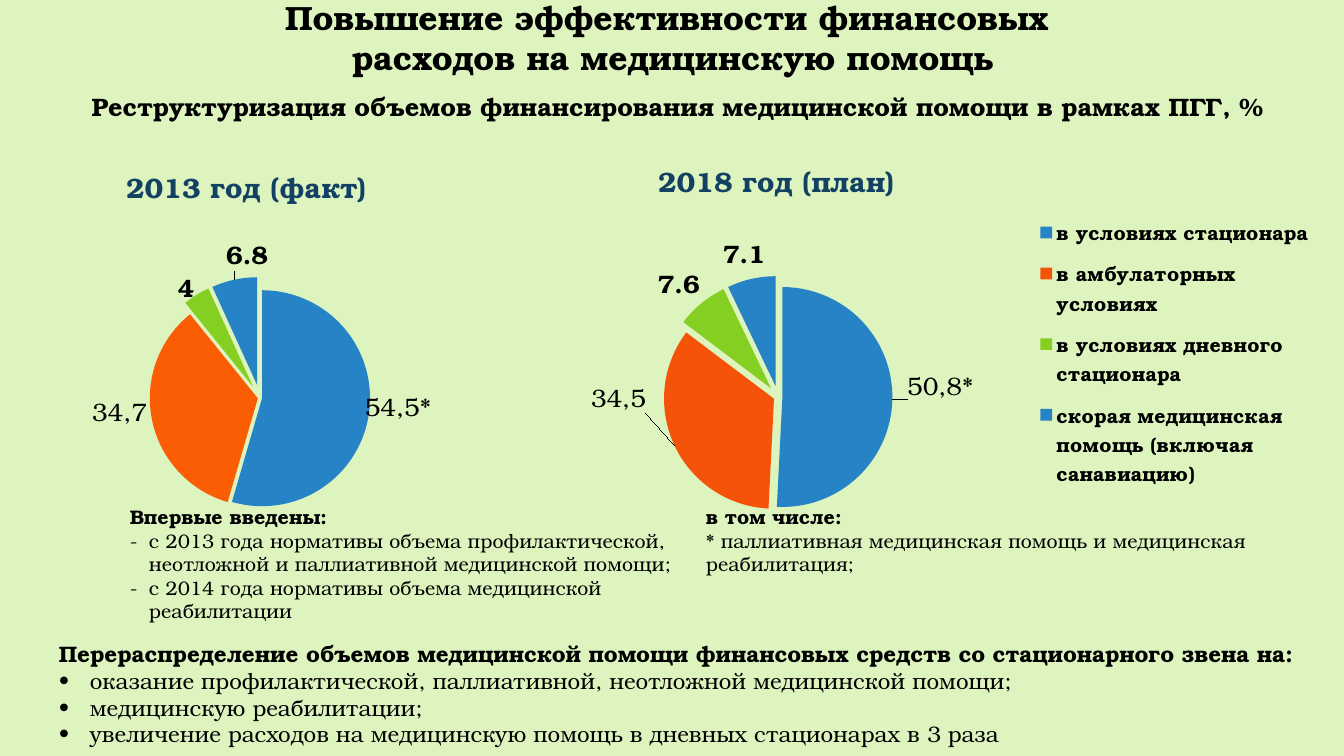
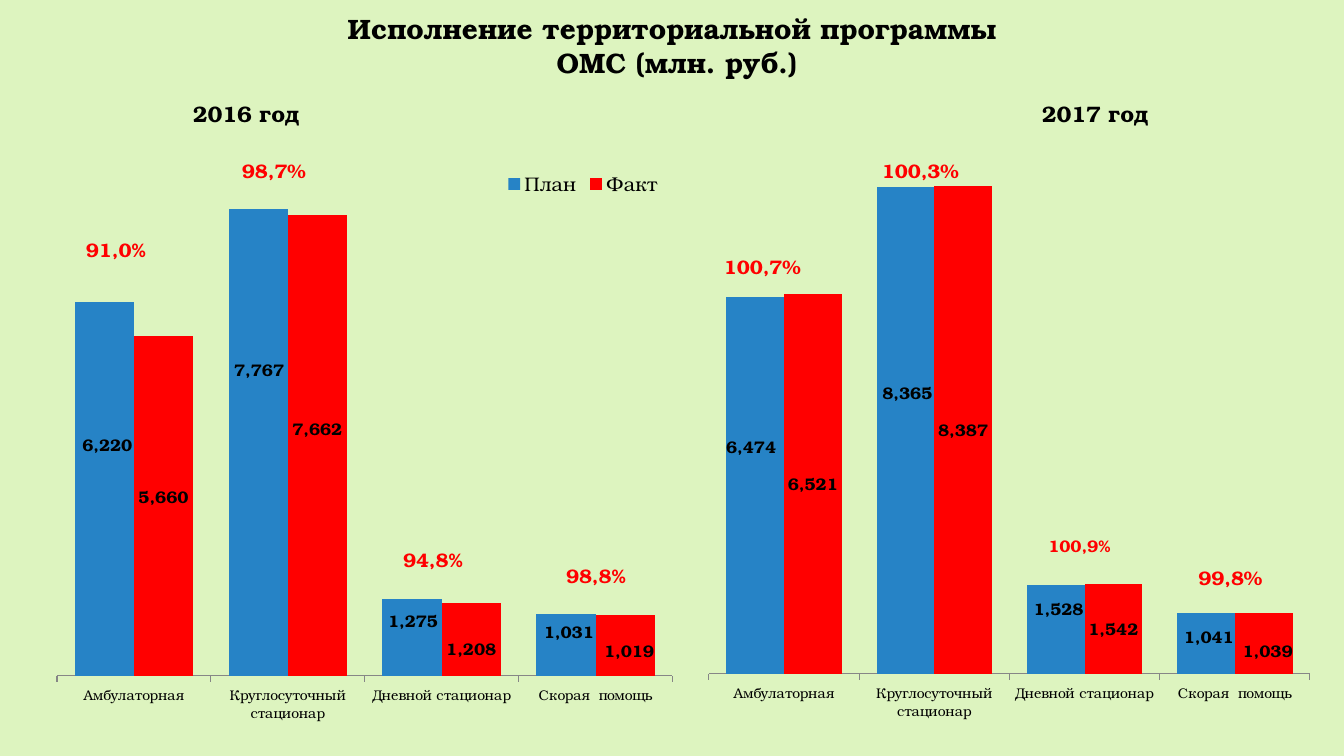
from dataclasses import dataclass
from typing import NamedTuple

from lxml.etree import SubElement
from pptx import Presentation
from pptx.chart.chart import Chart
from pptx.chart.data import CategoryChartData
from pptx.dml.color import RGBColor
from pptx.enum.chart import XL_CHART_TYPE, XL_LABEL_POSITION, XL_LEGEND_POSITION, XL_TICK_MARK
from pptx.enum.text import MSO_AUTO_SIZE, PP_ALIGN
from pptx.oxml import parse_xml
from pptx.oxml.ns import nsdecls, qn
from pptx.slide import Slide
from pptx.util import Emu, Pt

SCALE = 914400 / 100.8
FACE = "TeX Gyre Bonum"
SANS = "Calibri"
PALE = RGBColor(0xDD, 0xF4, 0xBF)
BLACK = RGBColor(0, 0, 0)
RED = RGBColor(0xFF, 0, 0)
NAVY = RGBColor(0x13, 0x41, 0x63)
BLUE = RGBColor(0x26, 0x83, 0xC6)
GREEN = RGBColor(0x85, 0xCF, 0x23)
FLAME = RGBColor(0xFB, 0x5D, 0x05)
RUST = RGBColor(0xF6, 0x53, 0x0A)
GREY = RGBColor(0x86, 0x86, 0x86)


class Box(NamedTuple):
    left: int
    top: int
    wide: int
    high: int


class Line(NamedTuple):
    text: str
    bold: bool = True
    mark: str = ""


class Shift(NamedTuple):
    right: int = 0
    down: int = 0


@dataclass
class Note:
    box: Box
    size: int
    lines: list[Line]
    color: RGBColor = BLACK
    center: bool = True
    indent: int = 0
    sign: str = ""


@dataclass
class Pie:
    box: Box
    plot: Box
    head: Box
    title: str
    cats: list[str]
    vals: list[float]
    fills: list[RGBColor]
    bursts: list[int]
    texts: list[str]
    shifts: list[Shift]
    key: Box | None = None


@dataclass
class Bars:
    box: Box
    plot: Box
    vals: list[list[int]]
    shifts: list[list[Shift]]
    key: Box | None = None


def px(size: int) -> Emu:
    return Emu(round(size * SCALE))


def style(font, size: int, bold: bool = False, color: RGBColor = BLACK) -> None:
    font.name = FACE
    font.size = Pt(size)
    font.bold = bold
    font.color.rgb = color


def add_note(slide: Slide, note: Note) -> None:
    frame = slide.shapes.add_textbox(*map(px, note.box)).text_frame
    frame.word_wrap = True
    frame.auto_size = MSO_AUTO_SIZE.SHAPE_TO_FIT_TEXT
    for row, line in enumerate(note.lines):
        para = frame.add_paragraph() if row else frame.paragraphs[0]
        para.add_run().text = line.text
        para.alignment = PP_ALIGN.CENTER if note.center else PP_ALIGN.LEFT
        style(para.font, note.size, line.bold, note.color)
        if note.sign:
            run = para.add_run()
            run.text = note.sign
            run.font.name = SANS
        if line.mark:
            props = para._p.get_or_add_pPr()
            props.set("marL", str(px(note.indent)))
            props.set("indent", str(-px(note.indent)))
            face = SubElement(props, qn("a:buFont"))
            face.set("typeface", FACE)
            bullet = SubElement(props, qn("a:buChar"))
            bullet.set("char", line.mark)
            props.insert(0, bullet)
            props.insert(0, face)


def place(node, spot: int, parts: dict[str, float | str]) -> None:
    for old in node.findall(qn("c:layout")):
        node.remove(old)
    rows = "".join(f'<c:{name} val="{part}"/>' for name, part in parts.items())
    node.insert(spot, parse_xml(
        f'<c:layout {nsdecls("c")}><c:manualLayout>{rows}</c:manualLayout></c:layout>'))


def fix(node, spot: int, base: Box, box: Box, full: bool = True) -> None:
    parts = {"xMode": "edge", "yMode": "edge",
             "x": round((box.left - base.left) / base.wide, 4),
             "y": round((box.top - base.top) / base.high, 4)}
    if full:
        parts |= {"w": round(box.wide / base.wide, 4), "h": round(box.high / base.high, 4)}
    place(node, spot, parts)


def nudge(chart: Chart, row: int, col: int, base: Box, shift: Shift) -> None:
    if any(shift):
        node = chart.element.xpath(
            f".//c:ser[{row + 1}]/c:dLbls/c:dLbl[c:idx/@val='{col}']")[0]
        place(node, 1, {"x": round(shift.right / base.wide, 4),
                        "y": round(shift.down / base.high, 4)})


def add_chart(slide: Slide, kind: XL_CHART_TYPE, data: CategoryChartData,
              box: Box, plot: Box, key: Box | None, bold: bool) -> Chart:
    chart = slide.shapes.add_chart(kind, *map(px, box), data).chart
    chart.font.name = SANS
    chart.font.size = Pt(18)
    chart.font.color.rgb = BLACK
    area = chart.element.xpath(".//c:plotArea")[0]
    fix(area, 0, box, plot)
    inner = area.xpath("./c:layout/c:manualLayout")[0]
    target = SubElement(inner, qn("c:layoutTarget"))
    target.set("val", "inner")
    inner.insert(0, target)
    chart.has_legend = key is not None
    if key:
        chart.legend.position = XL_LEGEND_POSITION.RIGHT
        chart.legend.include_in_layout = False
        style(chart.legend.font, 14, bold)
        fix(chart.element.xpath(".//c:legend")[0], 1, box, key)
    return chart


def add_pie(slide: Slide, pie: Pie) -> None:
    data = CategoryChartData()
    data.categories = pie.cats
    data.add_series(pie.title, pie.vals)
    chart = add_chart(slide, XL_CHART_TYPE.PIE, data, pie.box, pie.plot, pie.key, True)
    chart.has_title = True
    para = chart.chart_title.text_frame.paragraphs[0]
    run = para.add_run()
    run.text = pie.title
    style(run.font, 20, True, NAVY)
    fix(chart.element.xpath(".//c:title")[0], 1, pie.box, pie.head, False)
    plot = chart.plots[0]
    plot.vary_by_categories = True
    series = plot.series[0]
    labels = series.data_labels
    labels.show_value = True
    labels.position = XL_LABEL_POSITION.OUTSIDE_END
    style(labels.font, 18, True)
    for col, (fill, burst, text, shift) in enumerate(
            zip(pie.fills, pie.bursts, pie.texts, pie.shifts)):
        point = series.points[col]
        point.format.fill.solid()
        point.format.fill.fore_color.rgb = fill
        shape = chart.element.xpath(f".//c:dPt[c:idx/@val='{col}']/c:spPr")[0]
        shape.addprevious(parse_xml(f'<c:explosion {nsdecls("c")} val="{burst}"/>'))
        label = point.data_label
        if text:
            run = label.text_frame.paragraphs[0].add_run()
            run.text = text
            style(run.font, 18)
        else:
            style(label.font, 18, True)
        label.position = XL_LABEL_POSITION.OUTSIDE_END
        nudge(chart, 0, col, pie.box, shift)


def add_bars(slide: Slide, bars: Bars) -> None:
    data = CategoryChartData(number_format="#,##0")
    data.categories = ["Амбулаторная", "Круглосуточный стационар",
                       "Дневной стационар", "Скорая  помощь"]
    for name, vals in zip(("План", "Факт"), bars.vals):
        data.add_series(name, vals)
    chart = add_chart(slide, XL_CHART_TYPE.COLUMN_CLUSTERED, data,
                      bars.box, bars.plot, bars.key, False)
    chart.has_title = False
    scale = chart.value_axis
    scale.minimum_scale = 0
    scale.maximum_scale = 9000
    scale.has_major_gridlines = False
    scale.visible = False
    axis = chart.category_axis
    axis.major_tick_mark = XL_TICK_MARK.OUTSIDE
    axis.format.line.color.rgb = GREY
    style(axis.tick_labels.font, 10)
    plot = chart.plots[0]
    plot.gap_width = 60
    plot.overlap = 0
    plot.vary_by_categories = False
    for row, (series, fill) in enumerate(zip(plot.series, (BLUE, RED))):
        series.format.fill.solid()
        series.format.fill.fore_color.rgb = fill
        labels = series.data_labels
        labels.show_value = True
        labels.position = XL_LABEL_POSITION.CENTER
        style(labels.font, 12, True)
        for col, shift in enumerate(bars.shifts[row]):
            label = series.points[col].data_label
            style(label.font, 12, True)
            label.position = XL_LABEL_POSITION.CENTER
            nudge(chart, row, col, bars.box, shift)
    for lead in chart.element.xpath(".//c:showLeaderLines"):
        lead.set("val", "0")


STILL = Shift()
PIES = [
    Pie(Box(24, 149, 485, 383), Box(152, 290, 216, 216), Box(121, 158, 240, 28),
        "2013 год (факт)", ["1", "2", "3", "4"], [54.5, 34.7, 4, 6.8],
        [BLUE, FLAME, GREEN, BLUE], [2, 2, 12, 12], ["54,5*", "34,7", "", ""],
        [Shift(-10, -25), Shift(1, -27), Shift(1, 15), Shift(35, -2)]),
    Pie(Box(493, 149, 879, 381), Box(668, 287, 220, 220), Box(653, 152, 236, 28),
        "2018 год (план)",
        ["в условиях стационара", "в амбулаторных условиях", "в условиях дневного стационара",
         "скорая медицинская помощь (включая санавиацию)"], [50.8, 34.5, 7.6, 7.1],
        [BLUE, RUST, GREEN, BLUE], [4, 4, 10, 10], ["50,8*", "34,5", "", ""],
        [Shift(9, -15), Shift(-23, -68), Shift(2, 2), Shift(15, -2)],
        Box(1034, 206, 281, 294)),
]

COSTS = [
    Note(Box(74, -8, 1197, 92), 24, [Line("Повышение эффективности финансовых "),
                                     Line("расходов на медицинскую помощь")]),
    Note(Box(49, 86, 1257, 40), 18, [
        Line("Реструктуризация объемов финансирования медицинской помощи в рамках ПГГ, %")]),
    Note(Box(120, 500, 576, 159), 14, [
        Line("Впервые введены:"),
        Line("с 2013 года нормативы объема профилактической, неотложной и "
             "паллиативной медицинской помощи;", False, "-"),
        Line("с 2014 года нормативы объема медицинской реабилитации", False, "-"),
    ], center=False, indent=19),
    Note(Box(696, 500, 561, 112), 14, [
        Line("в том числе:"),
        Line("* паллиативная медицинская помощь и медицинская реабилитация;", False),
    ], center=False),
    Note(Box(49, 635, 1327, 149), 16, [
        Line("Перераспределение объемов медицинской помощи финансовых средств "
             "со стационарного звена на:"),
        Line("оказание профилактической, паллиативной, неотложной медицинской помощи;", False, "•"),
        Line("медицинскую реабилитации;", False, "•"),
        Line("увеличение расходов на медицинскую помощь в дневных стационарах в 3 раза", False, "•"),
    ], center=False, indent=31),
]

PLANS = [
    Bars(Box(45, 133, 628, 595), Box(57, 135, 616, 541),
         [[6220, 7767, 1275, 1031], [5660, 7662, 1208, 1019]],
         [[Shift(3, -44), Shift(1, -73), Shift(1, -17), Shift(3, -13)],
          [Shift(0, -9), Shift(0, -17), Shift(0, 9), Shift(4, 5)]],
         Box(502, 169, 164, 30)),
    Bars(Box(694, 140, 624, 588), Box(709, 150, 601, 524),
         [[6474, 8365, 1528, 1041], [6521, 8387, 1542, 1039]],
         [[Shift(-4, -39), Shift(2, -38), Shift(3, -21), Shift(3, -7)],
          [STILL, STILL, STILL, Shift(4, 7)]]),
]

RATES = [
    (Box(56, 233, 120, 34), "91,0", "%", 14),
    (Box(217, 154, 114, 34), "98,7%", "", 14),
    (Box(376, 543, 114, 34), "94,8", "%", 14),
    (Box(538, 559, 116, 34), "98,8", "%", 14),
    (Box(694, 250, 137, 34), "100,7%", "", 14),
    (Box(852, 154, 137, 34), "100,3%", "", 14),
    (Box(1021, 531, 117, 30), "100,9", "%", 12),
    (Box(1172, 561, 117, 34), "99,8%", "", 14),
]

HEADS = [
    Note(Box(137, 95, 218, 37), 16, [Line("2016 год")]),
    Note(Box(989, 95, 212, 37), 16, [Line("2017 год")]),
    Note(Box(0, 7, 1344, 78), 20, [Line("Исполнение территориальной программы"),
                                   Line(" ОМС (млн. руб.)")]),
]


def main() -> None:
    deck = Presentation()
    deck.slide_width, deck.slide_height = px(1344), px(756)
    back = deck.slide_master.background.fill
    back.solid()
    back.fore_color.rgb = PALE
    blank = deck.slide_layouts[6]
    first = deck.slides.add_slide(blank)
    for pie in PIES:
        add_pie(first, pie)
    for note in COSTS:
        add_note(first, note)
    second = deck.slides.add_slide(blank)
    for bars in PLANS:
        add_bars(second, bars)
    rates = [Note(box, size, [Line(text)], RED, sign=sign) for box, text, sign, size in RATES]
    for note in rates + HEADS:
        add_note(second, note)
    deck.save("out.pptx")


if __name__ == "__main__":
    main()
